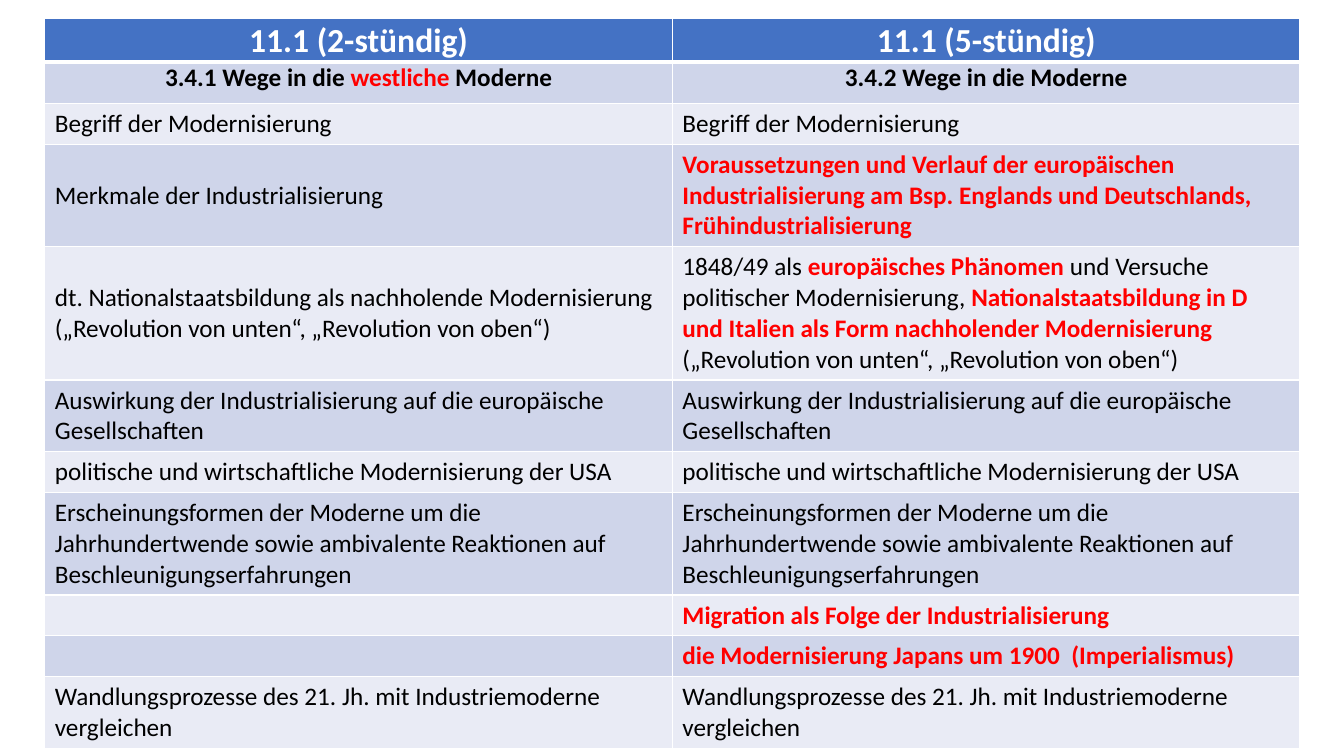
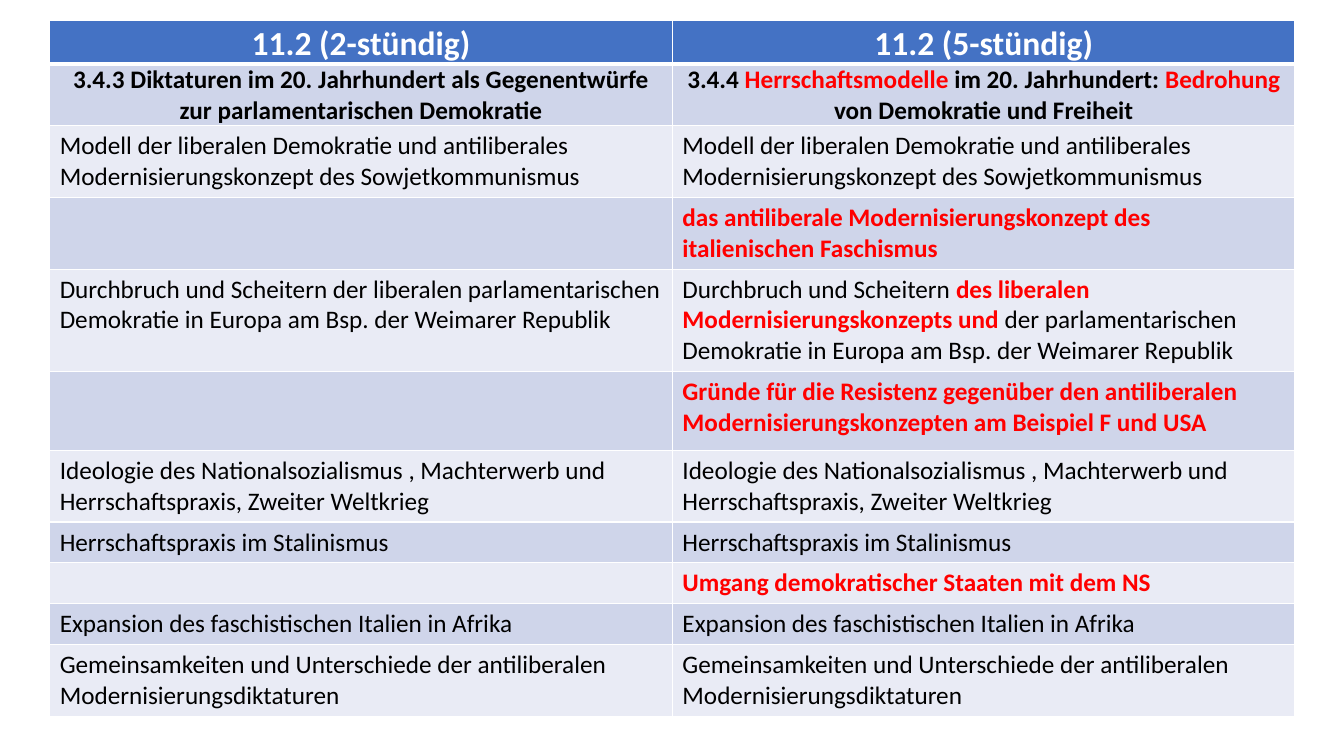
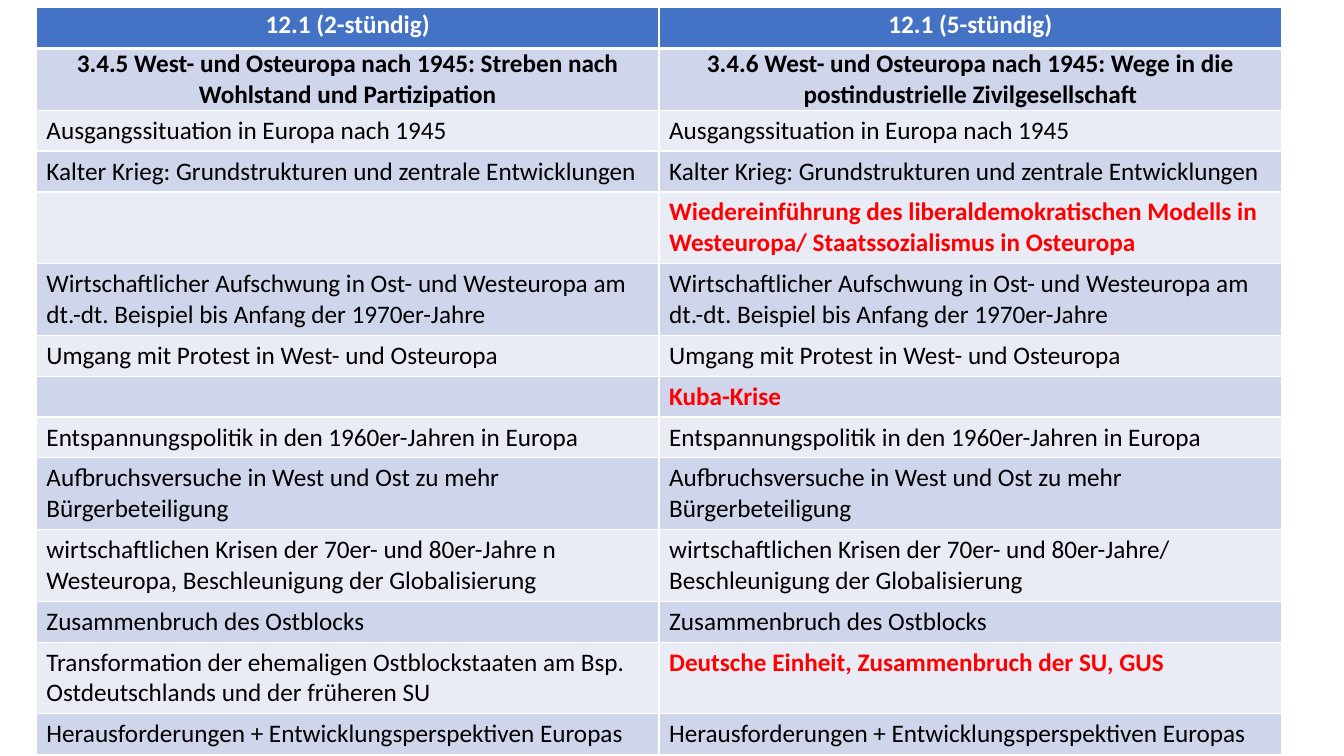
import pptx
import pptx.dml.color
import pptx.enum.text
import pptx.oxml.ns
import pptx.util
from lxml import etree

Pt = pptx.util.Pt
ALIGN = pptx.enum.text.PP_ALIGN
ANCHOR = pptx.enum.text.MSO_ANCHOR

FONT = "Calibri"
WHITE, BLACK, RED = "FFFFFF", "000000", "FF0000"
HEAD_FILL, BAND_FILLS = "4472C4", ("CFD5EA", "E9EBF5")
ONE, TWO, THREE, FOUR = (7.2 + 22 * n for n in range(1, 5))

TABLES = [
    {
        "left": 32, "top": 13, "column": 448.3, "head_size": 24,
        "head_gap": 3, "subhead_gap": 3, "body_gap": 3, "anchor": ANCHOR.MIDDLE,
        "rows": [
            (30.7, "11.1 (2-stündig)", "11.1 (5-stündig)"),
            (29.5, "3.4.1 Wege in die *westliche* Moderne", "3.4.2 Wege in die Moderne"),
            (ONE, "Begriff der Modernisierung"),
            (THREE, "Merkmale der Industrialisierung",
             "*Voraussetzungen und Verlauf der europäischen Industrialisierung am Bsp. "
             "Englands und Deutschlands, Frühindustrialisierung*"),
            (FOUR, "dt. Nationalstaatsbildung als nachholende Modernisierung "
             "(„Revolution von unten“, „Revolution von oben“)",
             "1848/49 als *europäisches Phänomen *und Versuche politischer Modernisierung, "
             "*Nationalstaatsbildung in D und Italien als Form nachholender Modernisierung *"
             "(„Revolution von unten“, „Revolution von oben“)"),
            (TWO, "Auswirkung der Industrialisierung auf die europäische Gesellschaften"),
            (ONE, "politische und wirtschaftliche Modernisierung der USA"),
            (THREE, "Erscheinungsformen der Moderne um die Jahrhundertwende sowie "
             "ambivalente Reaktionen auf Beschleunigungserfahrungen"),
            (ONE, "", "*Migration als Folge der Industrialisierung*"),
            (ONE, "", "*die Modernisierung Japans um 1900  (Imperialismus)*"),
            (TWO, "Wandlungsprozesse des 21. Jh. mit Industriemoderne vergleichen"),
        ],
    },
    {
        "left": 35.5, "top": 14.5, "column": 444.8, "head_size": 24,
        "head_gap": 6, "subhead_gap": 6, "body_gap": 6, "anchor": ANCHOR.TOP,
        "rows": [
            (31.4, "11.2 (2-stündig)", "11.2 (5-stündig)"),
            (44, "3.4.3 Diktaturen im 20. Jahrhundert als Gegenentwürfe zur "
             "parlamentarischen Demokratie",
             "3.4.4 *Herrschaftsmodelle* im 20. Jahrhundert: *Bedrohung* "
             "von Demokratie und Freiheit"),
            (TWO, "Modell der liberalen Demokratie und antiliberales "
             "Modernisierungskonzept des Sowjetkommunismus"),
            (TWO, "", "*das antiliberale Modernisierungskonzept des italienischen Faschismus*"),
            (THREE, "Durchbruch und Scheitern der liberalen parlamentarischen Demokratie "
             "in Europa am Bsp. der Weimarer Republik",
             "Durchbruch und Scheitern *des liberalen Modernisierungskonzepts und *"
             "der parlamentarischen Demokratie in Europa am Bsp. der Weimarer Republik"),
            (56.2, "", "*Gründe für die Resistenz gegenüber den antiliberalen "
             "Modernisierungskonzepten am Beispiel F und USA*"),
            (TWO, "Ideologie des Nationalsozialismus , Machterwerb und "
             "Herrschaftspraxis, Zweiter Weltkrieg"),
            (ONE, "Herrschaftspraxis im Stalinismus"),
            (ONE, "", "*Umgang demokratischer Staaten mit dem NS*"),
            (ONE, "Expansion des faschistischen Italien in Afrika"),
            (TWO, "Gemeinsamkeiten und Unterschiede der antiliberalen "
             "Modernisierungsdiktaturen"),
        ],
    },
    {
        "left": 26, "top": 5.5, "column": 444.8, "head_size": 18,
        "head_gap": 6, "subhead_gap": 3, "body_gap": 6, "anchor": ANCHOR.TOP,
        "rows": [
            (ONE, "12.1 (2-stündig)", "12.1 (5-stündig)"),
            (44, "3.4.5 West- und Osteuropa nach 1945: Streben nach Wohlstand und Partizipation",
             "3.4.6 West- und Osteuropa nach 1945: Wege in die postindustrielle "
             "Zivilgesellschaft"),
            (ONE, "Ausgangssituation in Europa nach 1945"),
            (ONE, "Kalter Krieg: Grundstrukturen und zentrale Entwicklungen"),
            (TWO, "", "*Wiedereinführung des liberaldemokratischen Modells in Westeuropa/ "
             "Staatssozialismus in Osteuropa*"),
            (TWO, "Wirtschaftlicher Aufschwung in Ost- und Westeuropa am dt.-dt. Beispiel "
             "bis Anfang der 1970er-Jahre"),
            (ONE, "Umgang mit Protest in West- und Osteuropa"),
            (ONE, "", "*Kuba-Krise*"),
            (ONE, "Entspannungspolitik in den 1960er-Jahren in Europa"),
            (TWO, "Aufbruchsversuche in West und Ost zu mehr Bürgerbeteiligung"),
            (TWO, "wirtschaftlichen Krisen der 70er- und 80er-Jahre n Westeuropa, "
             "Beschleunigung der Globalisierung",
             "wirtschaftlichen Krisen der 70er- und 80er-Jahre/ "
             "Beschleunigung der Globalisierung"),
            (ONE, "Zusammenbruch des Ostblocks"),
            (TWO, "Transformation der ehemaligen Ostblockstaaten am Bsp. Ostdeutschlands "
             "und der früheren SU",
             "*Deutsche Einheit, Zusammenbruch der SU, GUS*"),
            (ONE, "Herausforderungen + Entwicklungsperspektiven Europas"),
        ],
    },
]


def rgb(value):
    """Return the colour for a hex string."""
    return pptx.dml.color.RGBColor.from_string(value)


def apply(obj, formats):
    """Set each attribute in formats on obj."""
    for name, value in formats.items():
        setattr(obj, name, value)


def add_borders(cell, widths):
    """Draw white borders with the given widths by side."""
    tc_pr = cell._tc.get_or_add_tcPr()
    qn = pptx.oxml.ns.qn
    for side, width in widths.items():
        ln = etree.SubElement(tc_pr, qn(f"a:ln{side}"), w=str(Pt(width)))
        fill = etree.SubElement(ln, qn("a:solidFill"))
        etree.SubElement(fill, qn("a:srgbClr"), val=WHITE)


def add_text(cell, text, style):
    """Write text whose starred parts are red and bold."""
    p = cell.text_frame.paragraphs[0]
    apply(p, style["paragraph"])
    for i, part in enumerate(text.split("*")):
        if part:
            marked = i % 2 == 1
            r = p.add_run()
            r.text = part
            apply(r.font, {"name": FONT, "size": Pt(style["size"]),
                           "bold": marked or style["bold"]})
            r.font.color.rgb = rgb(RED if marked else style["color"])


def row_style(row, data):
    """Return the formats of a heading, subheading or body row."""
    gap = Pt(data[("head_gap", "subhead_gap", "body_gap")[min(row, 2)]])
    style = {"size": 18, "bold": row < 2, "color": BLACK, "fill": BAND_FILLS[(row + 1) % 2],
             "paragraph": {"space_before": gap, "space_after": gap},
             "cell": {"vertical_anchor": data["anchor"]},
             "borders": {"L": 1, "R": 1, "T": 3 if row == 1 else 1, "B": 3 if row == 0 else 1}}
    if row < 2:
        style["paragraph"]["alignment"] = ALIGN.CENTER
        style["cell"] = {"vertical_anchor": ANCHOR.TOP, "margin_left": Pt(5),
                         "margin_right": Pt(5), "margin_top": 0, "margin_bottom": 0}
    if row == 0:
        style.update(size=data["head_size"], color=WHITE, fill=HEAD_FILL)
        style["paragraph"]["line_spacing"] = 1.07
    return style


def add_comparison(s, data):
    """Add a two-column table; a row with one text shows it twice."""
    rows = data["rows"]
    height = sum(row[0] for row in rows)
    table = s.shapes.add_table(len(rows), 2, Pt(data["left"]), Pt(data["top"]),
                               Pt(2 * data["column"]), Pt(height)).table
    for column in table.columns:
        column.width = Pt(data["column"])
    for i, (row_height, *texts) in enumerate(rows):
        table.rows[i].height = Pt(row_height)
        style = row_style(i, data)
        for j, cell in enumerate(table.rows[i].cells):
            apply(cell, style["cell"])
            add_borders(cell, style["borders"])
            cell.fill.solid()
            cell.fill.fore_color.rgb = rgb(style["fill"])
            add_text(cell, texts[min(j, len(texts) - 1)], style)


def main():
    """Build and save the slides."""
    prs = pptx.Presentation()
    apply(prs, {"slide_width": Pt(960), "slide_height": Pt(540)})
    for data in TABLES:
        add_comparison(prs.slides.add_slide(prs.slide_layouts[6]), data)
    prs.save("out.pptx")


if __name__ == "__main__":
    main()
